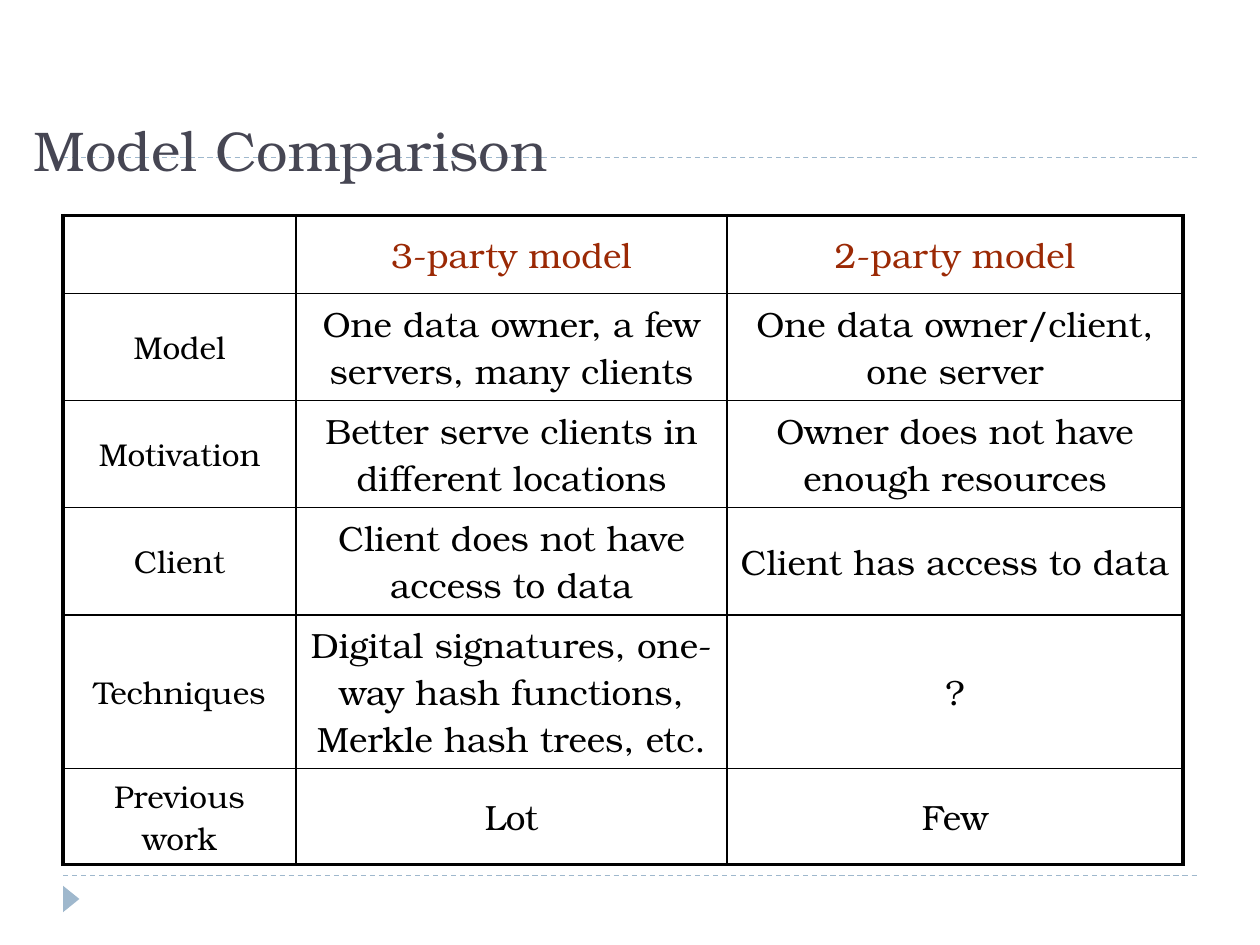
from lxml import etree
from pptx import Presentation
from pptx.dml import color
from pptx.enum import dml, shapes, text
from pptx.oxml import ns
from pptx.util import Inches, Pt

FONT = "TeX Gyre Bonum"
ACCENT, TITLE, HEADING, BLACK = "9FB8CD", "464653", "9B2905", "000000"
COLUMNS = [18.5, 34.2, 36.2]
ROWS = [6.2, 8.5, 8.5, 8.5, 12.2, 7.6]
COMPARISON = [
    ["", "3-party model", "2-party model"],
    ["Model", "One data owner, a few servers, many clients",
     "One data owner/client,\none server"],
    ["Motivation", "Better serve clients in different locations",
     "Owner does not have enough resources"],
    ["Client", "Client does not have access to data", "Client has access to data"],
    ["Techniques", "Digital signatures, one-way hash functions, Merkle hash trees, etc.", "?"],
    ["Previous work", "Lot", "Few"],
]


def rgb(value):
    return color.RGBColor.from_string(value)


class Deck:
    """Draws styled elements on a grid of 100 columns by 75 rows."""

    def __init__(self):
        self.presentation = Presentation()
        self.presentation.slide_width = Inches(10)
        self.presentation.slide_height = Inches(7.5)
        self.slide = self.presentation.slides.add_slide(self.presentation.slide_layouts[6])

    def grid(self, *cells):
        column = self.presentation.slide_width / 100
        return [round(cell * column) for cell in cells]

    def add_words(self, paragraph, words, size, colour):
        for index, line in enumerate(words.split("\n")):
            if index:
                paragraph.add_line_break()
            run = paragraph.add_run()
            run.text = line
            run.font.name = FONT
            run.font.size = Pt(size)
            run.font.color.rgb = rgb(colour)

    def rule(self, left, right, row):
        line = self.slide.shapes.add_connector(
            shapes.MSO_CONNECTOR.STRAIGHT, *self.grid(left, row, right, row))
        line.line.color.rgb = rgb(ACCENT)
        line.line.width = Pt(0.75)
        line.line.dash_style = dml.MSO_LINE.DASH
        etree.SubElement(line._element.spPr, ns.qn("a:effectLst"))

    def marker(self, *box):
        shape = self.slide.shapes.add_shape(
            shapes.MSO_SHAPE.ISOSCELES_TRIANGLE, *self.grid(*box))
        shape.rotation = 90
        shape.shadow.inherit = False
        shape.fill.solid()
        shape.fill.fore_color.rgb = rgb(ACCENT)
        shape.line.fill.background()

    def title(self, words, *box):
        frame = self.slide.shapes.add_textbox(*self.grid(*box)).text_frame
        frame.word_wrap = True
        frame.vertical_anchor = text.MSO_ANCHOR.BOTTOM
        self.add_words(frame.paragraphs[0], words, 32, TITLE)

    def border(self, cell, side, width):
        properties = cell._tc.get_or_add_tcPr()
        line = etree.SubElement(properties, ns.qn(f"a:ln{side}"), w=str(Pt(width)))
        fill = etree.SubElement(line, ns.qn("a:solidFill"))
        etree.SubElement(fill, ns.qn("a:srgbClr"), val=BLACK)

    def table(self, left, top, columns, rows, content):
        table = self.slide.shapes.add_table(
            len(rows), len(columns), *self.grid(left, top, sum(columns), sum(rows))).table
        table.first_row = table.horz_banding = False
        for column, width in zip(table.columns, self.grid(*columns)):
            column.width = width
        for row, height in zip(table.rows, self.grid(*rows)):
            row.height = height
        for r, line in enumerate(content):
            for c, words in enumerate(line):
                cell = table.cell(r, c)
                outer = {"L": c == 0, "R": c == len(columns) - 1,
                         "T": r == 0, "B": r == len(rows) - 1}
                for side, thick in outer.items():
                    self.border(cell, side, 2.25 if thick else 1)
                cell.fill.background()
                cell.vertical_anchor = text.MSO_ANCHOR.MIDDLE
                paragraph = cell.text_frame.paragraphs[0]
                paragraph.alignment = text.PP_ALIGN.CENTER
                paragraph.space_before = Pt(6)
                if words:
                    self.add_words(paragraph, words, 20 if c else 18, BLACK if r else HEADING)


def main():
    deck = Deck()
    for row in (69.5, 12.5):
        deck.rule(5, 95, row)
    deck.marker(4.6, 70.7, 2.1, 1.3)
    deck.title("Model Comparison", 1.7, 9.5, 90.2, 5.5)
    deck.table(5, 17.1, COLUMNS, ROWS, COMPARISON)
    deck.presentation.save("out.pptx")


if __name__ == "__main__":
    main()
